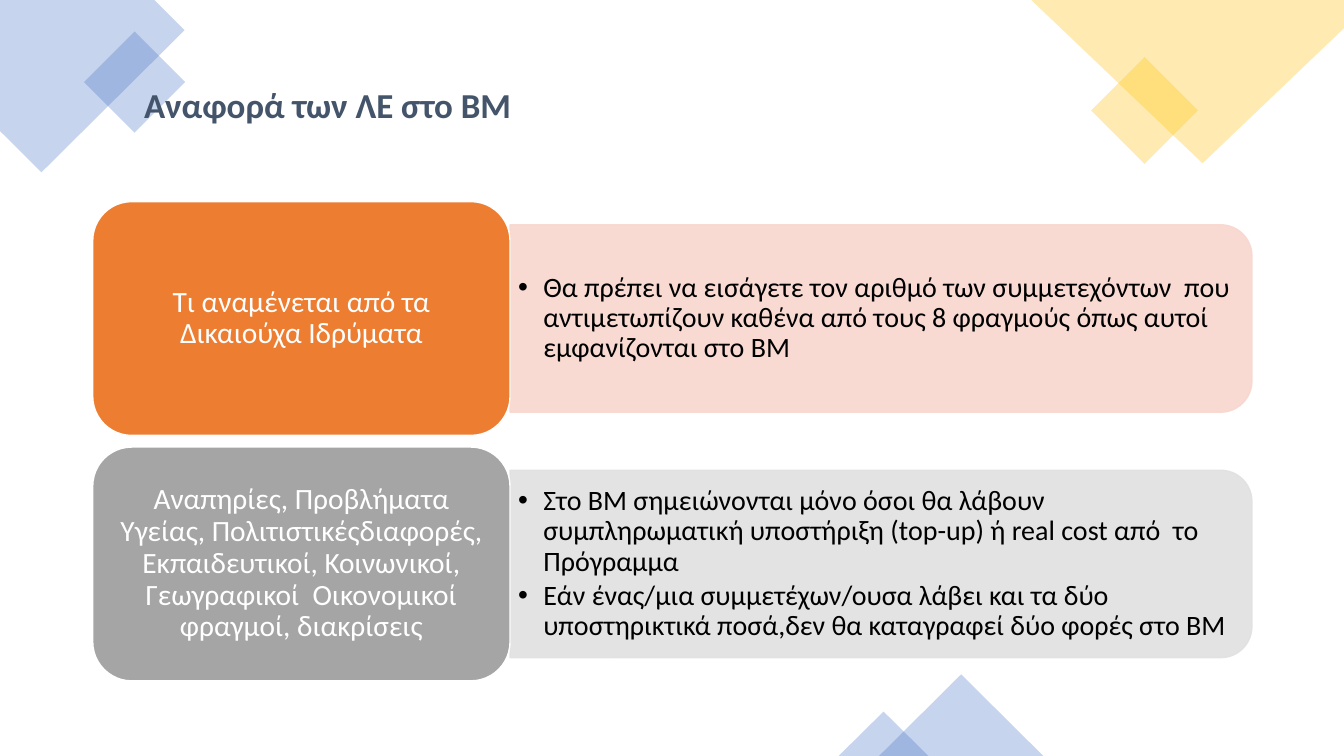
from dataclasses import dataclass

from lxml.etree import SubElement
from pptx import Presentation
from pptx.dml.color import RGBColor
from pptx.enum.shapes import MSO_SHAPE as Shape
from pptx.enum.text import MSO_ANCHOR as Anchor, PP_ALIGN as Align
from pptx.oxml.ns import qn
from pptx.util import Inches, Pt

WIDTH, HEIGHT = Inches(13.33), Inches(7.5)


@dataclass(frozen=True)
class Theme:
    font: str = "Calibri"
    blue: str = "4472C4"
    gold: str = "FFC000"
    orange: str = "ED7D31"
    gray: str = "A5A5A5"
    pale_orange: str = "F8D7CE"
    pale_gray: str = "E1E1E1"
    navy: str = "44546A"
    white: str = "FFFFFF"
    black: str = "000000"
    title_size: int = 25
    label_size: int = 21
    bullet_size: int = 20
    decor_opacity: int = 30
    panel_opacity: int = 90


THEME = Theme()

TITLE = "Αναφορά των ΛΕ στο ΒΜ"
CARDS = [
    (THEME.orange, THEME.pale_orange, "Τι αναμένεται από τα Δικαιούχα Ιδρύματα",
     ["Θα πρέπει να εισάγετε τον αριθμό των συμμετεχόντων  που αντιμετωπίζουν "
      "καθένα από τoυς 8 φραγμούς όπως αυτοί εμφανίζονται στο BM"]),
    (THEME.gray, THEME.pale_gray,
     "Αναπηρίες, Προβλήματα Υγείας, Πολιτιστικέςδιαφορές, Εκπαιδευτικοί, "
     "Κοινωνικοί, Γεωγραφικοί  Οικονομικοί φραγμοί, διακρίσεις",
     ["Στο BM σημειώνονται μόνο όσοι θα λάβουν συμπληρωματική υποστήριξη "
      "(top-up) ή real cost από  το Πρόγραμμα",
      "Εάν ένας/μια συμμετέχων/ουσα λάβει και τα δύο υποστηρικτικά ποσά,"
      "δεν θα καταγραφεί δύο φορές στο BM"]),
]

# Card layout, in percent of the slide's width or height
CARD_LEFT, CARD_TOP, CARD_PITCH = 6.9, 26.67, 32.47
LABEL_WIDTH, LABEL_HEIGHT = 31.05, 30.93
PANEL_WIDTH, PANEL_HEIGHT = 55.2, 24.8
BULLETS_WIDTH, BULLETS_HEIGHT = 54.53, 22.4


def across(percent):
    return round(WIDTH * percent / 100)


def down(percent):
    return round(HEIGHT * percent / 100)


def area(left, top, width, height):
    """Turn percentages of the slide into a position and a size."""
    return across(left), down(top), across(width), down(height)


def paint(shape, color, line=None, opacity=100):
    shape.shadow.inherit = False
    shape.fill.solid()
    shape.fill.fore_color.rgb = RGBColor.from_string(color)
    if line:
        shape.line.color.rgb = RGBColor.from_string(line)
        shape.line.width = Pt(1)
    else:
        shape.line.fill.background()
    if opacity < 100:
        for tint in shape.element.spPr.iter(qn("a:srgbClr")):
            SubElement(tint, qn("a:alpha"), val=str(opacity * 1000))


def write(shape, texts, size, color, spacing, bold=False, insets=(0.1, 0.05)):
    """Fill the shape with one paragraph per text and return the paragraphs."""
    frame = shape.text_frame
    frame.word_wrap = True
    frame.margin_left = frame.margin_right = Inches(insets[0])
    frame.margin_top = frame.margin_bottom = Inches(insets[1])
    frame.text = "\n".join(texts)
    for paragraph in frame.paragraphs:
        paragraph.line_spacing = spacing
        font = paragraph.font
        font.name, font.size, font.bold = THEME.font, Pt(size), bold
        font.color.rgb = RGBColor.from_string(color)
    return frame.paragraphs


def add_bullet(paragraph):
    properties = paragraph._p.get_or_add_pPr()
    properties.set("marL", str(Inches(0.25)))
    properties.set("indent", str(-Inches(0.25)))
    SubElement(properties, qn("a:buFont"), typeface="Arial")
    SubElement(properties, qn("a:buChar"), char="•")


def add_decor(slide, kind, box, color, rotation=0):
    shape = slide.shapes.add_shape(kind, *area(*box))
    shape.rotation = rotation
    paint(shape, color, opacity=THEME.decor_opacity)


def add_corner(slide, points, color):
    start, *rest = [(across(x), down(y)) for x, y in points]
    builder = slide.shapes.build_freeform(*start)
    builder.add_line_segments(rest, close=True)
    paint(builder.convert_to_shape(), color, opacity=THEME.decor_opacity)


def add_decorations(slide):
    add_corner(slide, [(0, 0), (11.48, 0), (13.73, 4), (3.08, 22.8), (0, 17.33)],
               THEME.blue)
    add_decor(slide, Shape.RECTANGLE, (7.35, 6.13, 5.33, 9.47), THEME.blue, 315)
    add_decor(slide, Shape.RECTANGLE, (82.35, 9.6, 5.63, 10), THEME.gold, 315)
    add_corner(slide, [(76.73, 0), (100, 0), (100, 3.73), (89.48, 21.6)], THEME.gold)
    for box in ((65.4, 89.2, 12.23, 10.8), (62.4, 94.13, 6.68, 5.87)):
        add_decor(slide, Shape.ISOSCELES_TRIANGLE, box, THEME.blue)


def add_panel(slide, left, middle, color):
    """Add a panel, turned a quarter so that its right-hand corners are round."""
    width, height = across(PANEL_WIDTH), down(PANEL_HEIGHT)
    center_x, center_y = across(left) + width // 2, down(middle)
    panel = slide.shapes.add_shape(
        Shape.ROUND_2_SAME_RECTANGLE,
        center_x - height // 2, center_y - width // 2, height, width)
    panel.rotation = 90
    paint(panel, color, color, THEME.panel_opacity)


def add_bullets(slide, left, middle, texts):
    box = slide.shapes.add_textbox(
        *area(left, middle - BULLETS_HEIGHT / 2, BULLETS_WIDTH, BULLETS_HEIGHT))
    box.text_frame.vertical_anchor = Anchor.MIDDLE
    for paragraph in write(box, texts, THEME.bullet_size, THEME.black, 0.9,
                           insets=(0.08, 0.04)):
        paragraph.space_after = Pt(3)
        add_bullet(paragraph)


def add_label(slide, top, text, color):
    label = slide.shapes.add_shape(
        Shape.ROUNDED_RECTANGLE, *area(CARD_LEFT, top, LABEL_WIDTH, LABEL_HEIGHT))
    paint(label, color, THEME.white)
    label.text_frame.vertical_anchor = Anchor.MIDDLE
    for paragraph in write(label, [text], THEME.label_size, THEME.white, 0.9,
                           insets=(0.09, 0.04)):
        paragraph.alignment = Align.CENTER


def add_card(slide, row, color, pale, label, bullets):
    top = CARD_TOP + row * CARD_PITCH
    middle = top + LABEL_HEIGHT / 2
    left = CARD_LEFT + LABEL_WIDTH
    add_panel(slide, left, middle, pale)
    add_bullets(slide, left, middle, bullets)
    add_label(slide, top, label, color)


def add_title(slide):
    box = slide.shapes.add_textbox(*area(9.98, 11.87, 33.15, 5.47))
    write(box, [TITLE], THEME.title_size, THEME.navy, 0.7, bold=True)


def main():
    presentation = Presentation()
    presentation.slide_width, presentation.slide_height = WIDTH, HEIGHT
    slide = presentation.slides.add_slide(presentation.slide_layouts[6])
    add_decorations(slide)
    for row, card in enumerate(CARDS):
        add_card(slide, row, *card)
    add_title(slide)
    presentation.save("out.pptx")


if __name__ == "__main__":
    main()
